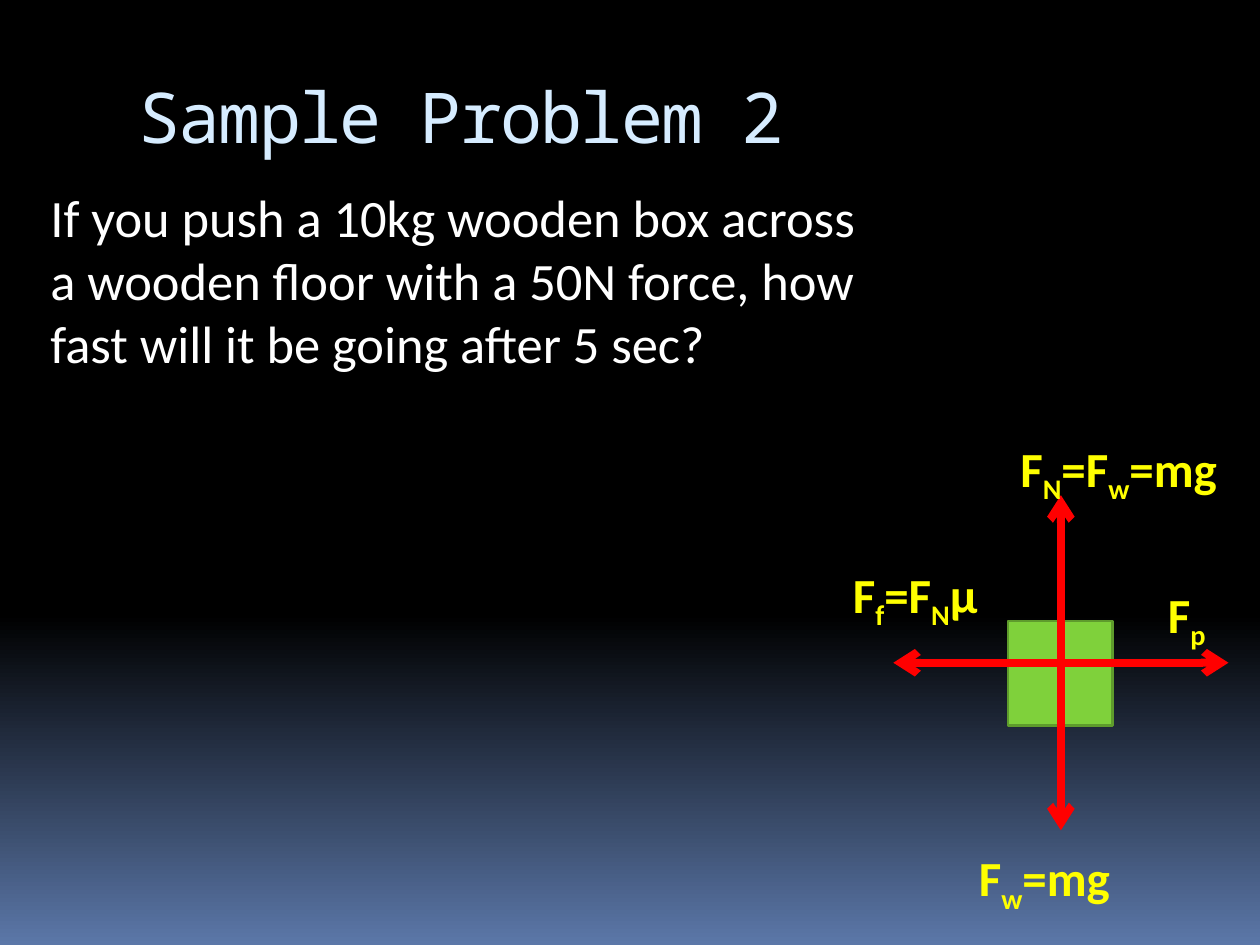
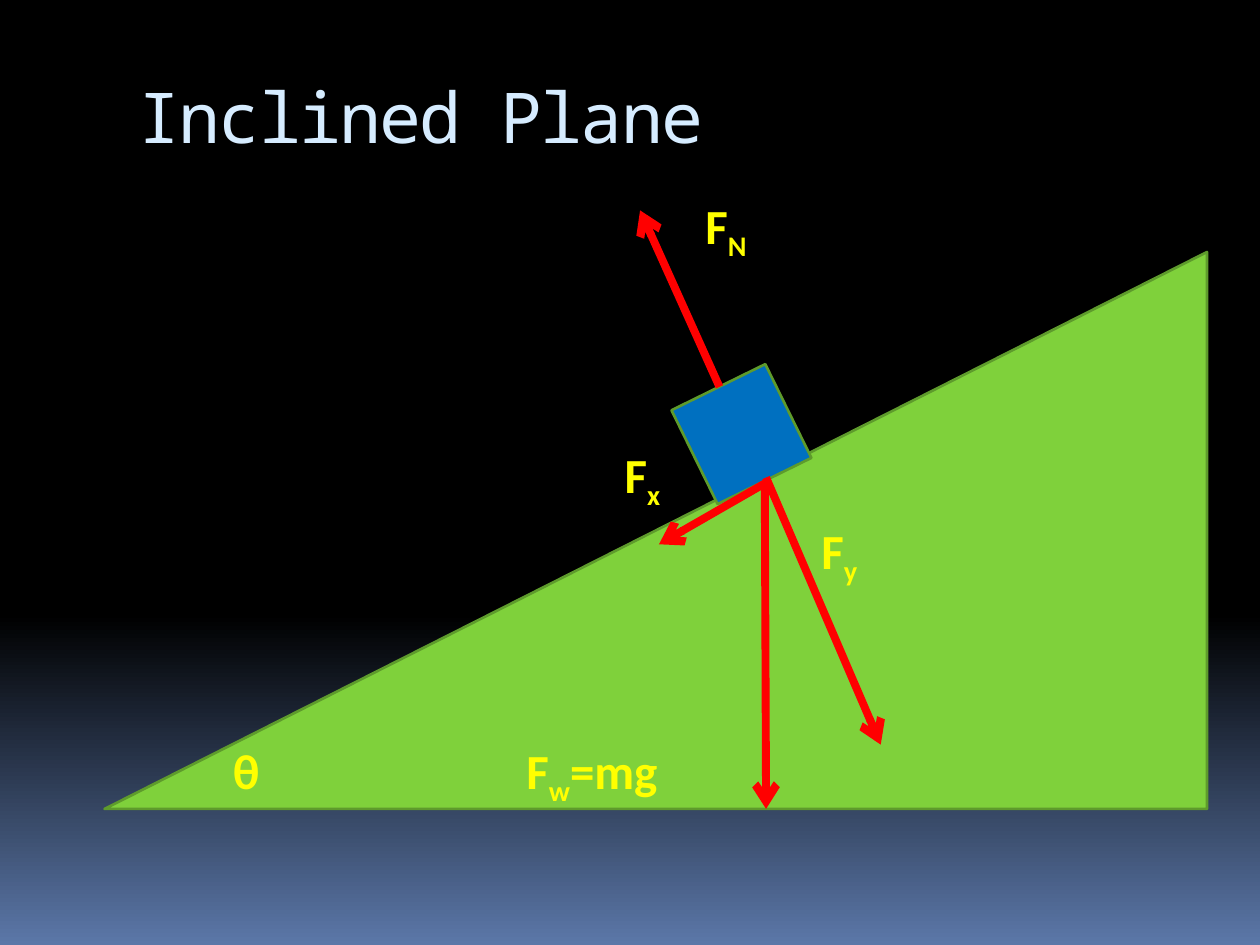
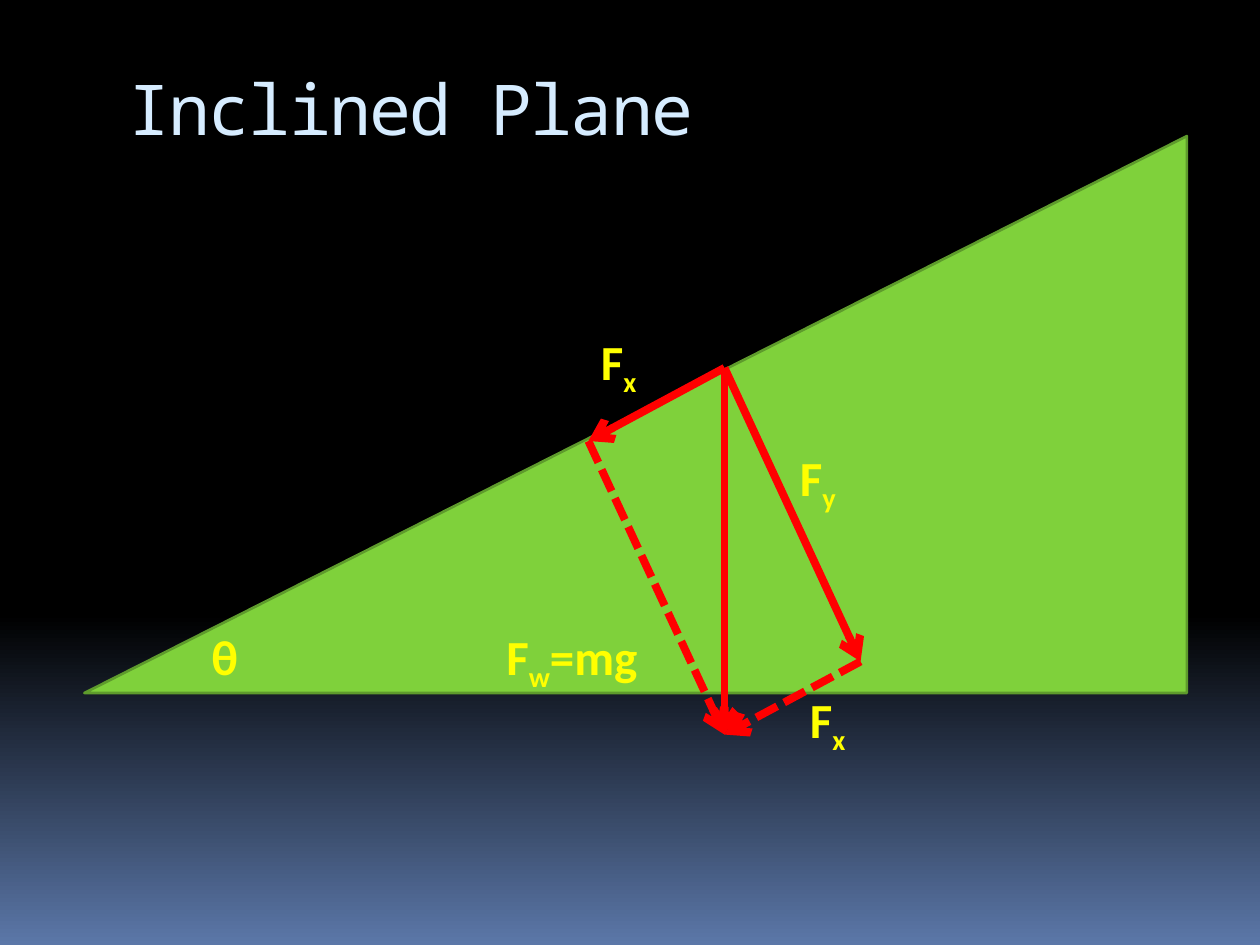
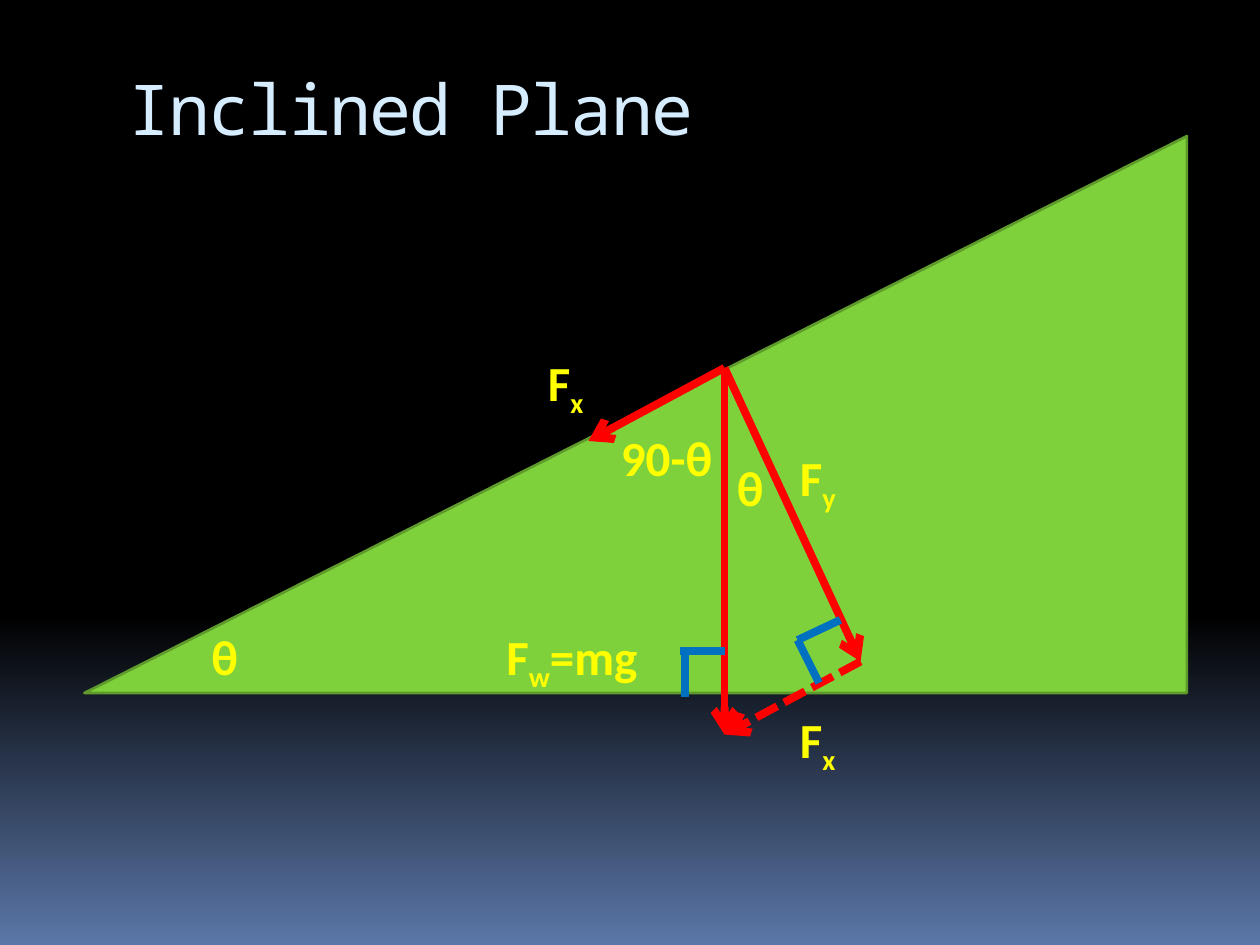
"""Build four slides on forces, from a pushed box to the inclined plane."""
from dataclasses import dataclass

from lxml import etree
from pptx import Presentation
from pptx.dml.color import RGBColor
from pptx.enum.dml import MSO_LINE
from pptx.enum.shapes import MSO_CONNECTOR, MSO_SHAPE
from pptx.enum.text import MSO_ANCHOR, MSO_AUTO_SIZE
from pptx.oxml.ns import qn
from pptx.util import Inches, Pt

RECT = MSO_SHAPE.RECTANGLE
WEDGE = MSO_SHAPE.RIGHT_TRIANGLE
LINE = MSO_CONNECTOR.STRAIGHT
DASH = MSO_LINE.SQUARE_DOT
TOP = MSO_ANCHOR.TOP
GROW = MSO_AUTO_SIZE.SHAPE_TO_FIT_TEXT

COLORS = {
    "black": "000000",
    "dusk": "5B77A8",
    "title": "D6ECFF",
    "body": "FFFFFF",
    "label": "FFFF00",
    "force": "FF0000",
    "green": "7FD13B",
    "edge": "5E9B2C",
    "blue": "0070C0",
}
BODY_FONT = "Calibri"
TITLE_FONT = "Noto Sans Mono"
SIDE = 0.83


@dataclass
class Label:
    """Text in which an underscore lowers the next letter."""
    text: str
    x: float
    y: float
    width: float = 1.58


@dataclass
class Stroke:
    """A straight line, by default a solid force arrow."""
    start: tuple[float, float]
    end: tuple[float, float]
    color: str = "force"
    head: bool = True
    dash: bool = False


def rgb(name: str) -> RGBColor:
    return RGBColor.from_string(COLORS[name])


def new_slide(deck, title: str, x: float, y: float):
    slide = deck.slides.add_slide(deck.slide_layouts[6])
    fill = slide.background.fill
    fill.gradient()
    fill.gradient_angle = 270
    for stop, place, name in zip(fill.gradient_stops, (0.65, 1), ("black", "dusk")):
        stop.position = place
        stop.color.rgb = rgb(name)
    para = add_text(slide, x, y, 8.5, 1, 40, "title", TITLE_FONT, top=0.02)
    run = para.add_run()
    run.text = title
    run.font._element.set("spc", "-100")
    return slide


def add_text(slide, x: float, y: float, width: float, height: float, size: int,
             color: str, face: str = BODY_FONT, left: float = 0.1,
             top: float = 0.05, grow: bool = False):
    box = slide.shapes.add_textbox(Inches(x), Inches(y), Inches(width), Inches(height))
    frame = box.text_frame
    frame.word_wrap = True
    frame.vertical_anchor = TOP
    frame.margin_left, frame.margin_top = Inches(left), Inches(top)
    if grow:
        frame.auto_size = GROW
    para = frame.paragraphs[0]
    para.font.size = Pt(size)
    para.font.name = face
    para.font.color.rgb = rgb(color)
    return para


def add_label(slide, label: Label) -> None:
    para = add_text(slide, label.x, label.y, label.width, 0.57, 28, "label", grow=True)
    para.font.bold = True
    first, *rest = label.text.split("_")
    parts = [(first, False)]
    for part in rest:
        parts += [(part[0], True), (part[1:], False)]
    for text, low in parts:
        if text:
            run = para.add_run()
            run.text = text
            if low:
                run.font._element.set("baseline", "-25000")


def add_stroke(slide, stroke: Stroke) -> None:
    ends = [Inches(value) for value in (*stroke.start, *stroke.end)]
    link = slide.shapes.add_connector(LINE, *ends)
    link.line.width = Pt(4.5)
    link.line.color.rgb = rgb(stroke.color)
    if stroke.dash:
        link.line.dash_style = DASH
    props = link._element.spPr
    if stroke.head:
        etree.SubElement(props.find(qn("a:ln")), qn("a:tailEnd"), type="arrow")
    etree.SubElement(props, qn("a:effectLst"))


def add_solid(slide, kind, x: float, y: float, width: float, height: float, color: str):
    shape = slide.shapes.add_shape(kind, Inches(x), Inches(y), Inches(width), Inches(height))
    shape.shadow.inherit = False
    shape.fill.solid()
    shape.fill.fore_color.rgb = rgb(color)
    shape.line.color.rgb = rgb("edge")
    shape.line.width = Pt(1.5)
    return shape


def add_wedge(slide, x: float, y: float) -> None:
    wedge = add_solid(slide, WEDGE, x, y, 8.75, 4.42, "green")
    wedge._element.spPr.find(qn("a:xfrm")).set("flipH", "1")


def draw(slide, strokes: list[Stroke], labels: list[Label]) -> None:
    for stroke in strokes:
        add_stroke(slide, stroke)
    for label in labels:
        add_label(slide, label)


def push_slide(deck) -> None:
    slide = new_slide(deck, "Sample Problem 2", 1, 0.56)
    para = add_text(slide, 0.33, 1.42, 6.67, 5.53, 30, "body", left=0.07)
    para.space_before = Pt(7)
    para.text = ("If you push a 10kg wooden box across a wooden floor "
                 "with a 50N force, how fast will it be going after 5 sec?")
    add_solid(slide, RECT, 8, 4.93, SIDE, SIDE, "green")
    x, y, reach = 8.42, 5.26, 1.33
    ways = ((0, -1), (1, 0), (0, 1), (-1, 0))
    strokes = [Stroke((x, y), (x + reach * dx, y + reach * dy)) for dx, dy in ways]
    draw(slide, strokes, [
        Label("F_w=mg", 7.67, 6.68),
        Label("F_N=F_w=mg", 8, 3.43, 2.17),
        Label("F_p", 9.17, 4.59, 0.67),
        Label("F_f=F_Nµ", 6.67, 4.43),
    ])


def block_slide(deck) -> None:
    slide = new_slide(deck, "Inclined Plane", 1, 0.56)
    add_wedge(slide, 0.83, 2)
    add_solid(slide, RECT, 5.47, 3.03, SIDE, SIDE, "blue").rotation = 333.8
    draw(slide, [
        Stroke((6.08, 3.79), (6.99, 5.91)),
        Stroke((6.1, 3.82), (5.23, 4.32)),
        Stroke((5.71, 3.07), (5.08, 1.67)),
        Stroke((6.07, 3.82), (6.08, 6.42)),
    ], [
        Label("F_w=mg", 4.08, 5.83),
        Label("θ", 1.75, 5.83),
        Label("F_N", 5.5, 1.5),
        Label("F_y", 6.42, 4.08),
        Label("F_x", 4.86, 3.48, 0.82),
    ])


def parts_slide(deck, strokes: list[Stroke], labels: list[Label]) -> None:
    slide = new_slide(deck, "Inclined Plane", 0.92, 0.5)
    add_wedge(slide, 0.67, 1.08)
    peak, foot, right, left = (5.75, 2.92), (5.75, 5.83), (6.83, 5.25), (4.67, 3.5)
    forces = [Stroke(peak, tip) for tip in (foot, right, left)]
    forces.append(Stroke(right, foot, dash=True))
    names = [Label("F_w=mg", 3.92, 4.92), Label("θ", 1.58, 4.92), Label("F_y", 6.25, 3.5)]
    draw(slide, forces + strokes, names + labels)


def main() -> None:
    deck = Presentation()
    deck.slide_width, deck.slide_height = Inches(10), Inches(7.5)
    push_slide(deck)
    block_slide(deck)
    parts_slide(deck, [Stroke((4.67, 3.5), (5.75, 5.83), dash=True)],
                [Label("F_x", 4.67, 2.58), Label("F_x", 6.33, 5.42)])
    marks = (
        ((6.67, 4.92), (6.33, 5.08)),
        ((6.33, 5.08), (6.5, 5.42)),
        ((5.75, 5.17), (5.4, 5.17)),
        ((5.44, 5.53), (5.44, 5.17)),
    )
    parts_slide(deck, [Stroke(start, end, "blue", head=False) for start, end in marks], [
        Label("F_x", 4.25, 2.75),
        Label("F_x", 6.25, 5.58),
        Label("90-θ", 4.83, 3.34),
        Label("θ", 5.75, 3.58),
    ])
    deck.save("out.pptx")


if __name__ == "__main__":
    main()
